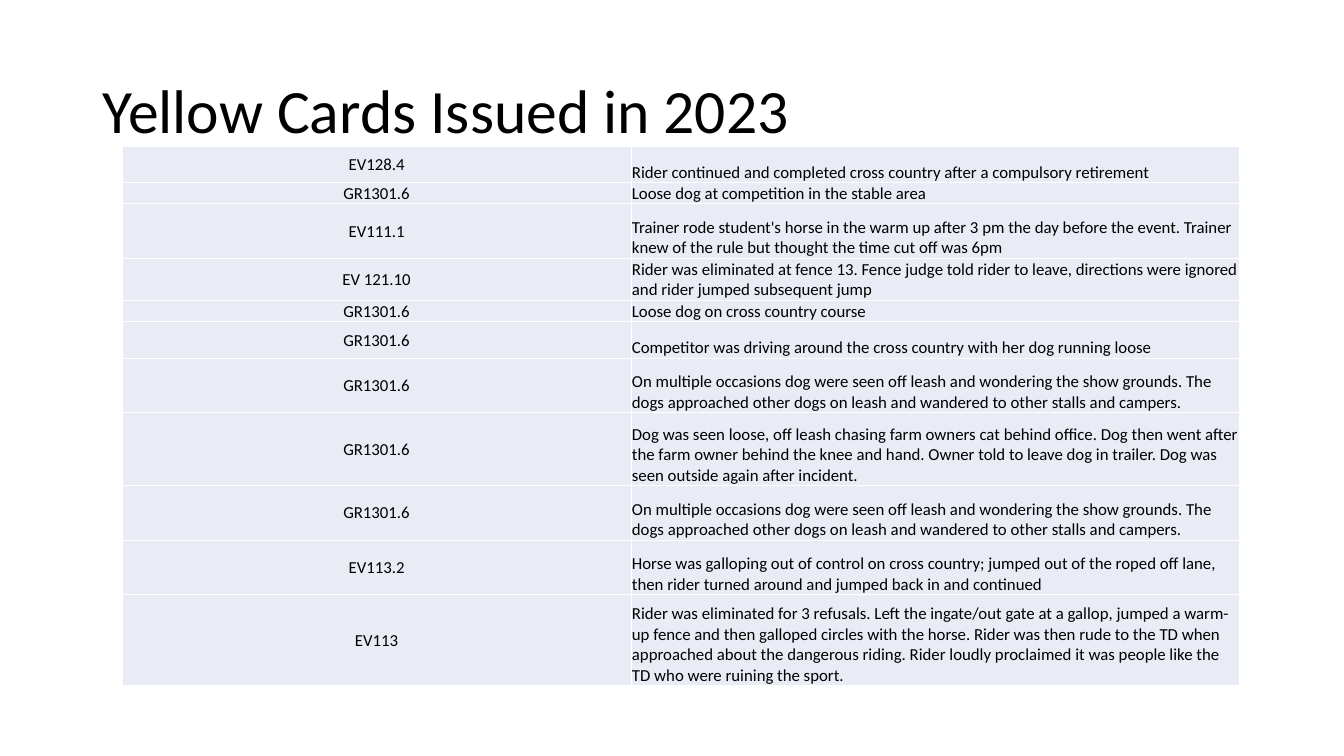
"""Build the slide that lists the yellow cards issued in 2023."""
from dataclasses import dataclass

import pptx
import pptx.dml.color
import pptx.enum.text
import pptx.oxml
import pptx.oxml.ns
import pptx.util
from pptx.util import Pt


@dataclass(frozen=True)
class Theme:
    """Colours, font and type sizes of the slide."""
    font: str = "Calibri"
    ink: str = "000000"
    cell: str = "E9EBF5"
    rule: str = "FFFFFF"
    title_size: int = 44
    body_size: int = 12


THEME = Theme()
COLUMN_WIDTHS = (363.6, 434.9)
OFF_LEASH = (
    "On multiple occasions dog were seen off leash and wondering the show grounds. "
    "The dogs approached other dogs on leash and wandered to other stalls and campers."
)
CARDS = (
    (26, "EV128.4", "Rider continued and completed cross country after a compulsory retirement"),
    (15, "GR1301.6", "Loose dog at competition in the stable area"),
    (39, "EV111.1",
     "Trainer rode student's horse in the warm up after 3 pm the day before the event. "
     "Trainer knew of the rule but thought the time cut off was 6pm"),
    (30, "EV 121.10",
     "Rider was eliminated at fence 13. Fence judge told rider to leave, "
     "directions were ignored and rider jumped subsequent jump"),
    (15, "GR1301.6", "Loose dog on cross country course"),
    (26, "GR1301.6", "Competitor was driving around the cross country with her dog running loose"),
    (39, "GR1301.6", OFF_LEASH),
    (52, "GR1301.6",
     "Dog was seen loose, off leash chasing farm owners cat behind office. "
     "Dog then went after the farm owner behind the knee and hand. "
     "Owner told to leave dog in trailer. Dog was seen outside again after incident."),
    (39, "GR1301.6", OFF_LEASH),
    (39, "EV113.2",
     "Horse was galloping out of control on cross country; jumped out of the roped off lane, "
     "then rider turned around and jumped back in and continued"),
    (65, "EV113",
     "Rider was eliminated for 3 refusals. Left the ingate/out gate at a gallop, "
     "jumped a warm-up fence and then galloped circles with the horse. "
     "Rider was then rude to the TD when approached about the dangerous riding. "
     "Rider loudly proclaimed it was people like the TD who were ruining the sport."),
)


def style_paragraph(paragraph, size, alignment):
    """Set the font, size, colour and alignment of a paragraph."""
    paragraph.alignment = alignment
    paragraph.font.name = THEME.font
    paragraph.font.size = Pt(size)
    paragraph.font.color.rgb = pptx.dml.color.RGBColor.from_string(THEME.ink)


def set_title(slide, wording):
    """Place and format the title placeholder."""
    title = slide.shapes.title
    title.left, title.top, title.width, title.height = Pt(66), Pt(28.75), Pt(828), Pt(104.4)
    frame = title.text_frame
    frame.text = wording
    frame.word_wrap = True
    frame.auto_size = pptx.enum.text.MSO_AUTO_SIZE.NONE
    frame.vertical_anchor = pptx.enum.text.MSO_ANCHOR.MIDDLE
    heading = frame.paragraphs[0]
    heading.line_spacing = 0.9
    style_paragraph(heading, THEME.title_size, pptx.enum.text.PP_ALIGN.LEFT)


def add_borders(cell):
    """Draw a thin rule on all four sides of a cell."""
    properties = cell._tc.get_or_add_tcPr()
    for side in ("lnL", "lnR", "lnT", "lnB"):
        properties.append(pptx.oxml.parse_xml(
            f'<a:{side} {pptx.oxml.ns.nsdecls("a")} w="{Pt(1)}"><a:solidFill>'
            f'<a:srgbClr val="{THEME.rule}"/></a:solidFill></a:{side}>'))


def fill_cell(cell, wording, alignment, anchor):
    """Write and format one table cell."""
    cell.text = wording
    cell.margin_left = cell.margin_right = cell.margin_top = Pt(0.6)
    cell.margin_bottom = 0
    cell.vertical_anchor = anchor
    style_paragraph(cell.text_frame.paragraphs[0], THEME.body_size, alignment)
    add_borders(cell)
    cell.fill.solid()
    cell.fill.fore_color.rgb = pptx.dml.color.RGBColor.from_string(THEME.cell)


def add_card_table(slide, cards):
    """Add the table of rules broken and what happened."""
    height = sum(card[0] for card in cards)
    table = slide.shapes.add_table(
        len(cards), len(COLUMN_WIDTHS), Pt(87.2), Pt(104.4),
        Pt(sum(COLUMN_WIDTHS)), Pt(height)).table
    table.first_row = table.horz_banding = False
    for column, width in zip(table.columns, COLUMN_WIDTHS):
        column.width = Pt(width)
    align, anchor = pptx.enum.text.PP_ALIGN, pptx.enum.text.MSO_ANCHOR
    for row, (row_height, rule, incident) in zip(table.rows, cards):
        row.height = Pt(row_height)
        fill_cell(row.cells[0], rule, align.CENTER, anchor.MIDDLE)
        fill_cell(row.cells[1], incident, align.LEFT, anchor.BOTTOM)


def main():
    """Build and save the presentation."""
    deck = pptx.Presentation()
    deck.slide_width, deck.slide_height = Pt(960), Pt(540)
    slide = deck.slides.add_slide(deck.slide_layouts.get_by_name("Title Only"))
    set_title(slide, "Yellow Cards Issued in 2023")
    add_card_table(slide, CARDS)
    deck.save("out.pptx")


if __name__ == "__main__":
    main()
